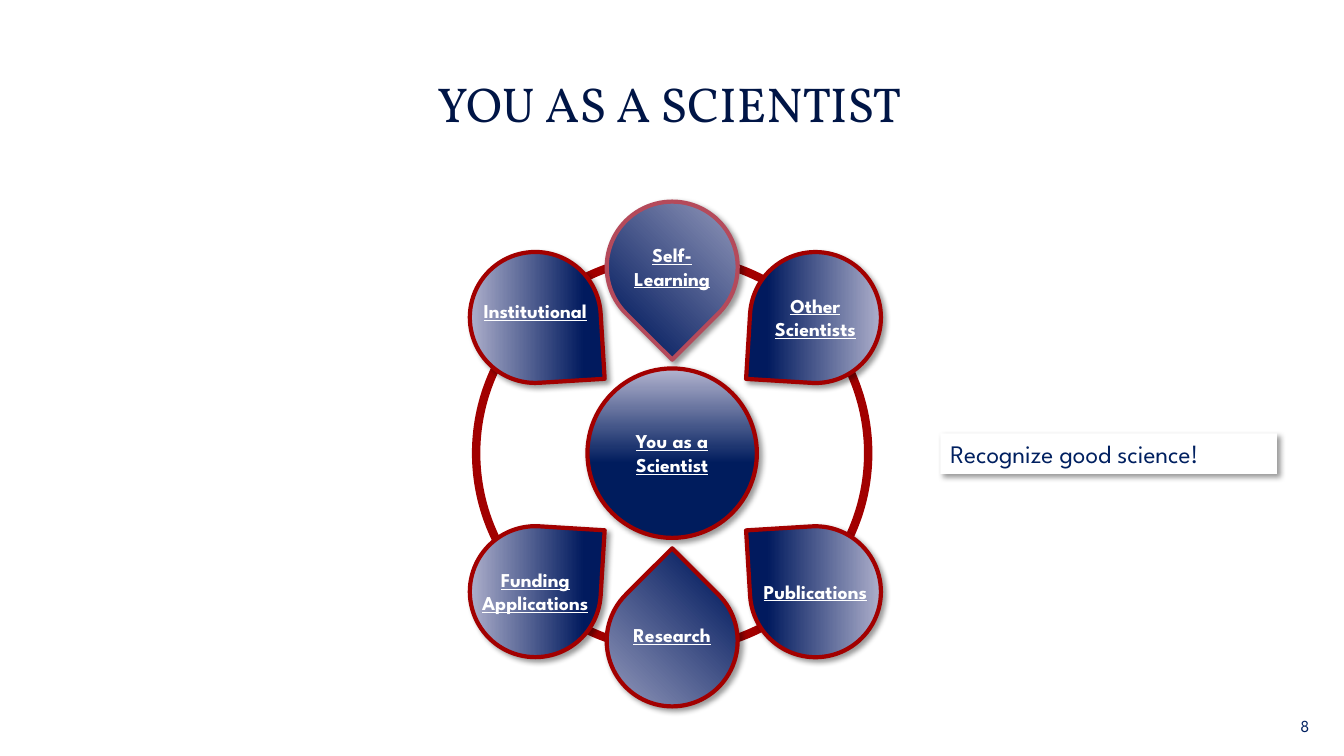
from lxml import etree
from pptx import Presentation
from pptx.dml.color import RGBColor
from pptx.enum.shapes import MSO_SHAPE
from pptx.enum.text import MSO_ANCHOR, PP_ALIGN
from pptx.oxml.ns import qn
from pptx.util import Cm, Pt

ELLIPSE, TEARDROP, RECTANGLE = MSO_SHAPE.OVAL, MSO_SHAPE.TEAR, MSO_SHAPE.RECTANGLE
LEFT, CENTER, RIGHT = PP_ALIGN.LEFT, PP_ALIGN.CENTER, PP_ALIGN.RIGHT
TOP, MIDDLE = MSO_ANCHOR.TOP, MSO_ANCHOR.MIDDLE

WHITE = RGBColor(0xFF, 0xFF, 0xFF)
TITLE_NAVY = RGBColor(0x00, 0x15, 0x46)
TEXT_NAVY = RGBColor(0x00, 0x20, 0x60)
DROP_NAVY = RGBColor(0x01, 0x1A, 0x5E)
HUB_NAVY = RGBColor(0x00, 0x1C, 0x5D)
LAVENDER = RGBColor(0xB3, 0xB4, 0xCF)
RED = RGBColor(0xA2, 0x00, 0x00)
ROSE = RGBColor(0xB4, 0x4A, 0x5B)

HEADING_FONT = "Vollkorn"
BODY_FONT = "League Spartan"

CENTER_X, CENTER_Y = 16.94, 11.42
LEFT_X, RIGHT_X = 13.49, 20.55
UPPER_Y, LOWER_Y = 8.0, 14.91
RING_SIZE, HUB_SIZE, DROP_SIZE = 9.88, 4.27, 3.3

DROPS = [
    (["Research"], CENTER_X, 16.15, 315, 225, RED, -0.15),
    (["Self-", "Learning"], CENTER_X, 6.73, 135, 45, ROSE, 0),
    (["Institutional"], LEFT_X, UPPER_Y, 86.5, 180, RED, -0.15),
    (["Other", "Scientists"], RIGHT_X, UPPER_Y, 183.5, 0, RED, 0),
    (["Publications"], RIGHT_X, LOWER_Y, 266.5, 0, RED, 0),
    (["Funding", "Applications"], LEFT_X, LOWER_Y, 3.5, 180, RED, 0),
]


class SlideBuilder:
    def __init__(self, slide):
        self.slide = slide

    def shape(self, kind, left, top, width, height):
        shape = self.slide.shapes.add_shape(kind, Cm(left), Cm(top), Cm(width), Cm(height))
        shape.shadow.inherit = False
        return shape

    def round_shape(self, kind, center_x, center_y, size, color, weight):
        shape = self.shape(kind, center_x - size / 2, center_y - size / 2, size, size)
        shape.fill.background()
        shape.line.color.rgb = color
        shape.line.width = Pt(weight)
        return shape

    def gradient(self, shape, dark, dark_position, angle):
        shape.fill.gradient()
        shape.fill.gradient_angle = angle
        stops = zip(shape.fill.gradient_stops, (dark, LAVENDER), (dark_position, 1))
        for stop, color, position in stops:
            stop.color.rgb = color
            stop.position = position
        shape.element.spPr.find(qn("a:gradFill")).set("rotWithShape", "0")

    def drop_shadow(self, shape):
        effects = shape.element.spPr.find(qn("a:effectLst"))
        shadow = etree.SubElement(
            effects, qn("a:outerShdw"), blurRad=str(Pt(4)), dist=str(Pt(3)),
            dir="2700000", algn="tl", rotWithShape="0")
        color = etree.SubElement(shadow, qn("a:srgbClr"), val="000000")
        etree.SubElement(color, qn("a:alpha"), val="40000")

    def set_text(self, shape, lines, size, color, font=BODY_FONT, align=LEFT,
                 anchor=TOP, wrap=True, emphasis=False):
        frame = shape.text_frame
        frame.word_wrap = wrap
        frame.vertical_anchor = anchor
        frame.text = "\n".join(lines)
        for paragraph in frame.paragraphs:
            paragraph.alignment = align
            paragraph.font.name = font
            paragraph.font.size = Pt(size)
            paragraph.font.color.rgb = color
            if emphasis:
                paragraph.font.bold = True
                paragraph.font.underline = True

    def text(self, left, top, width, height, lines, size, color, **style):
        box = self.slide.shapes.add_textbox(Cm(left), Cm(top), Cm(width), Cm(height))
        self.set_text(box, lines, size, color, **style)

    def label(self, lines, center_x, center_y):
        width, height = 3.5, 0.27 + 0.59 * len(lines)
        self.text(center_x - width / 2, center_y - height / 2, width, height, lines,
                  14, WHITE, align=CENTER, wrap=False, emphasis=True)

    def drop(self, lines, center_x, center_y, rotation, angle, outline, label_shift):
        shape = self.round_shape(TEARDROP, center_x, center_y, DROP_SIZE, outline, 3)
        shape.rotation = rotation
        self.gradient(shape, DROP_NAVY, 0.15, angle)
        self.drop_shadow(shape)
        self.label(lines, center_x, center_y + label_shift)

    def hub(self, lines):
        shape = self.round_shape(ELLIPSE, CENTER_X, CENTER_Y, HUB_SIZE, RED, 3)
        self.gradient(shape, HUB_NAVY, 0.44, 90)
        self.drop_shadow(shape)
        self.label(lines, CENTER_X, CENTER_Y)

    def callout(self, left, top, width, height, line):
        shape = self.shape(RECTANGLE, left, top, width, height)
        shape.fill.solid()
        shape.fill.fore_color.rgb = WHITE
        shape.line.fill.background()
        self.drop_shadow(shape)
        self.set_text(shape, [line], 18, TEXT_NAVY, wrap=False)


def main():
    presentation = Presentation()
    presentation.slide_width = Cm(33.87)
    presentation.slide_height = Cm(19.05)
    slide = presentation.slides.add_slide(presentation.slide_layouts[6])
    builder = SlideBuilder(slide)

    builder.text(1.57, 1.14, 30.6, 2.9, ["YOU AS A SCIENTIST"], 35, TITLE_NAVY,
                 font=HEADING_FONT, align=CENTER, anchor=MIDDLE)
    builder.round_shape(ELLIPSE, CENTER_X, CENTER_Y, RING_SIZE, RED, 6)
    for drop in DROPS:
        builder.drop(*drop)
    builder.hub(["You as a", "Scientist"])
    builder.text(27.33, 17.78, 5.92, 1.02, ["8"], 12, TEXT_NAVY,
                 align=RIGHT, anchor=MIDDLE)
    builder.callout(23.7, 10.92, 8.48, 1.02, "Recognize good science!")

    presentation.save("out.pptx")


if __name__ == "__main__":
    main()
